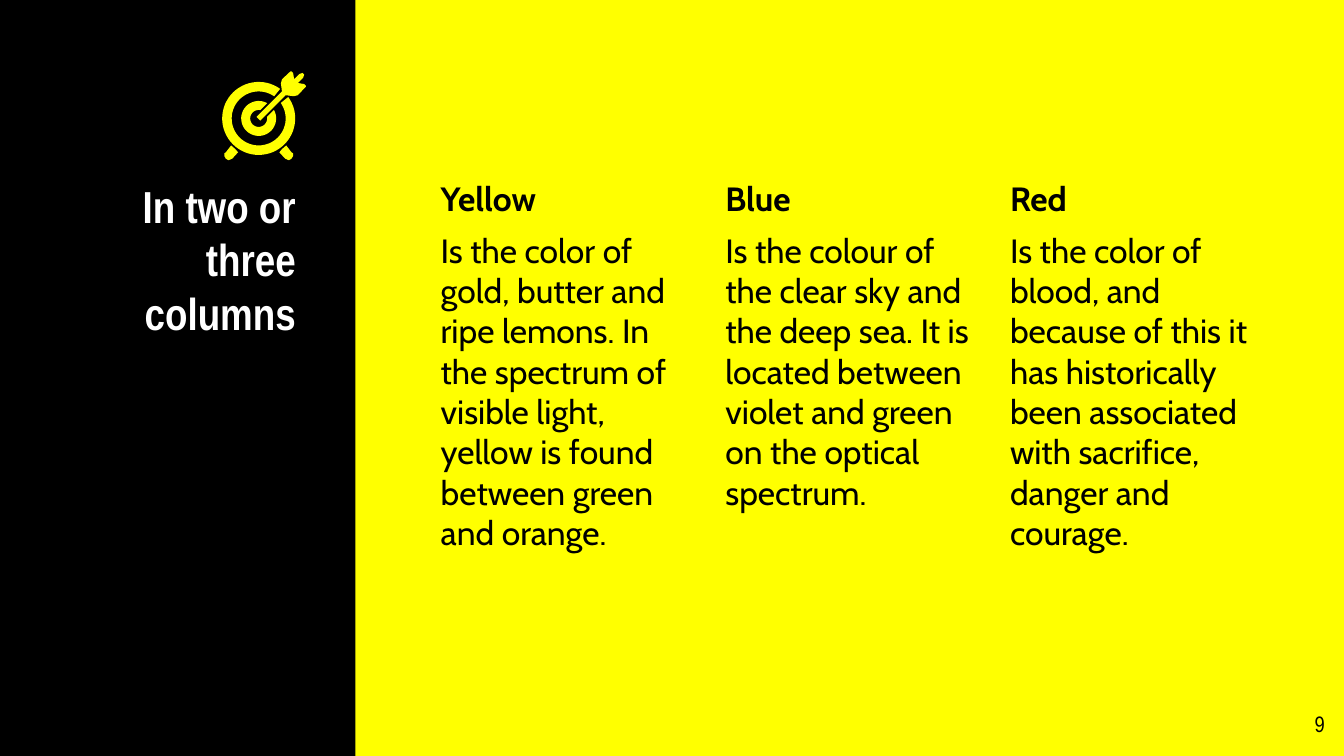
from math import cos, radians, sin

from pptx import Presentation
from pptx.dml.color import RGBColor
from pptx.enum.shapes import MSO_SHAPE
from pptx.enum.text import MSO_ANCHOR, PP_ALIGN
from pptx.util import Cm, Pt

COLORS = {"yellow": "FFFF00", "black": "000000", "white": "FFFFFF"}
HEADING_FONT = "Arial Narrow"
BODY_FONT = "Cabin"
SLIDE_WIDTH, SLIDE_HEIGHT = 25.4, 14.29
SIDEBAR_WIDTH = 6.72
TEXT_TOP = 3.12
COLUMN_LEFT, COLUMN_WIDTH, COLUMN_STEP = 8.08, 5.13, 5.38

COLUMNS = [
    ("Yellow", "Is the color of gold, butter and ripe lemons. In the spectrum "
               "of visible light, yellow is found between green and orange."),
    ("Blue", "Is the colour of the clear sky and the deep sea. It is located "
             "between violet and green on the optical spectrum."),
    ("Red", "Is the color of blood, and because of this it has historically "
            "been associated with sacrifice, danger and courage."),
]

# Target icon, in centimetres from its centre
ICON_CENTER = (4.89, 2.24)
RINGS = [  # (radius, half of the gap in degrees) for outer and inner edge
    ((0.69, 9), (0.51, 10)),
    ((0.33, 16), (0.16, 34)),
]
RIGHT_FOOT = [(0.52, 0.51), (0.44, 0.58), (0.39, 0.64), (0.5, 0.76), (0.57, 0.79),
              (0.62, 0.76), (0.65, 0.71), (0.65, 0.66), (0.62, 0.64)]
DART_HALF = [(0.83, -0.86), (0.77, -0.84), (0.67, -0.74), (0.65, -0.86),
             (0.62, -0.89), (0.6, -0.89), (0.44, -0.74), (0.42, -0.66),
             (0.44, -0.51), (-0.04, -0.03)]


def color(name):
    return RGBColor.from_string(COLORS[name])


def paint(shape, name):
    shape.fill.solid()
    shape.fill.fore_color.rgb = color(name)
    shape.line.fill.background()
    shape.shadow.inherit = False


def add_text(slide, box, texts, font, size, color_name,
             bold_first=False, alignment=PP_ALIGN.LEFT, space_before=0):
    shape = slide.shapes.add_textbox(*[Cm(length) for length in box])
    frame = shape.text_frame
    frame.word_wrap = True
    frame.vertical_anchor = MSO_ANCHOR.TOP
    frame.margin_left = frame.margin_right = Cm(0.25)
    frame.margin_top = frame.margin_bottom = Cm(0.25)
    frame.text = "\n".join(texts)
    for index, paragraph in enumerate(frame.paragraphs):
        paragraph.alignment = alignment
        paragraph.space_before = Pt(space_before)
        for run in paragraph.runs:
            run.font.name = font
            run.font.size = Pt(size)
            run.font.bold = bold_first and index == 0
            run.font.color.rgb = color(color_name)


def arc(radius, half_gap):
    """Points around a circle that is open towards the upper right."""
    steps = 60
    start, sweep = -45 + half_gap, 360 - 2 * half_gap
    angles = [radians(start + sweep * step / steps) for step in range(steps + 1)]
    return [(radius * cos(angle), radius * sin(angle)) for angle in angles]


def add_outline(group, points):
    center_x, center_y = ICON_CENTER
    vertices = [(Cm(center_x + x), Cm(center_y + y)) for x, y in points]
    builder = group.shapes.build_freeform(*vertices[0], scale=1.0)
    builder.add_line_segments(vertices[1:], close=True)
    paint(builder.convert_to_shape(), "yellow")


def add_target_icon(slide):
    group = slide.shapes.add_group_shape()
    for outer, inner in RINGS:
        add_outline(group, arc(*outer) + arc(*inner)[::-1])
    for side in (-1, 1):
        add_outline(group, [(side * x, y) for x, y in RIGHT_FOOT])
    # The dart is symmetric about its diagonal axis
    add_outline(group, DART_HALF + [(-y, -x) for x, y in reversed(DART_HALF)])


def main():
    presentation = Presentation()
    presentation.slide_width = Cm(SLIDE_WIDTH)
    presentation.slide_height = Cm(SLIDE_HEIGHT)
    slide = presentation.slides.add_slide(presentation.slide_layouts[6])

    # Background and sidebar
    slide.background.fill.solid()
    slide.background.fill.fore_color.rgb = color("yellow")
    sidebar = slide.shapes.add_shape(
        MSO_SHAPE.RECTANGLE, 0, 0, Cm(SIDEBAR_WIDTH), Cm(SLIDE_HEIGHT))
    paint(sidebar, "black")

    # Title
    add_text(slide, (1.12, TEXT_TOP, 4.72, 4.11), ["In two or three columns"],
             HEADING_FONT, 24, "white", bold_first=True, alignment=PP_ALIGN.RIGHT)

    # Text columns
    for index, texts in enumerate(COLUMNS):
        left = COLUMN_LEFT + index * COLUMN_STEP
        add_text(slide, (left, TEXT_TOP, COLUMN_WIDTH, 10.54), texts,
                 BODY_FONT, 18, "black", bold_first=True, space_before=6)

    # Icon and page number
    add_target_icon(slide)
    add_text(slide, (23.77, 13.18, 1.52, 1.09), ["9"],
             HEADING_FONT, 12, "black", alignment=PP_ALIGN.RIGHT)

    presentation.save("out.pptx")


if __name__ == "__main__":
    main()
